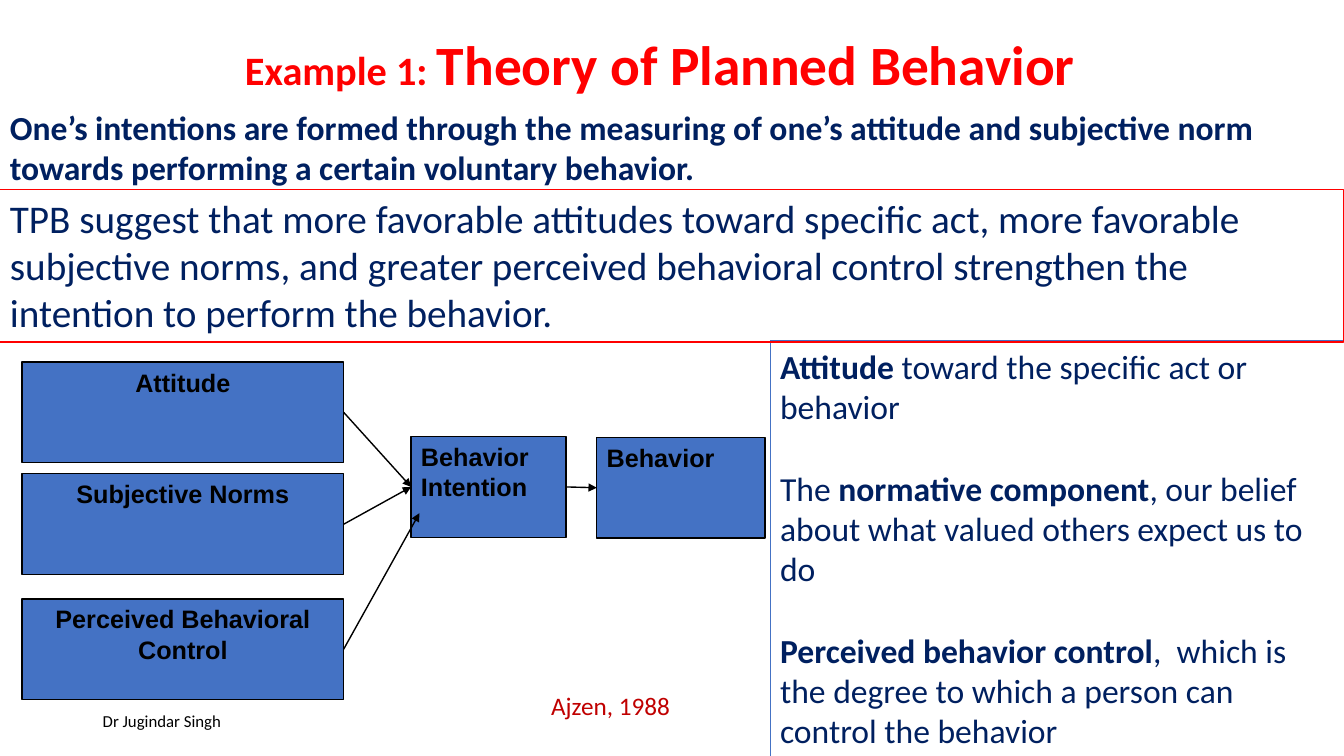
from lxml.etree import SubElement
from pptx import Presentation
from pptx.dml.color import RGBColor
from pptx.enum.shapes import MSO_CONNECTOR, MSO_SHAPE
from pptx.enum.text import MSO_ANCHOR, MSO_AUTO_SIZE, PP_ALIGN
from pptx.oxml.ns import qn
from pptx.util import Cm, Pt

# Content: a paragraph is a list of (text, size, bold) runs
HEAD = [[("Example 1: ", 28.8, True), ("Theory of Planned Behavior", 39.6, True)]]
INTRO = [[("One’s intentions are formed through the measuring of one’s attitude and "
           "subjective norm towards performing a certain voluntary behavior.", 24, True)]]
CLAIM = [[("TPB suggest that more favorable attitudes toward specific act, more "
           "favorable subjective norms, and greater perceived behavioral control "
           "strengthen the intention to perform the behavior.", 28, False)]]
TERMS = [
    [("Attitude", 24, True), (" toward the specific act or behavior", 24, False)],
    [("The ", 24, False), ("normative component", 24, True),
     (", our belief about what valued others expect us to do", 24, False)],
    [("Perceived behavior control", 24, True),
     (",  which is the degree to which a person can control the behavior", 24, False)],
]
AUTHOR = [[("Dr Jugindar Singh", 12, False)]]
SOURCE = [[("Ajzen, 1988", 18, False)]]

# Model boxes: name, left, top, width in cm, alignment
CAUSES = [("Attitude", 9.12), ("Subjective Norms", 11.94),
          ("Perceived Behavioral Control", 15.09)]
BOXES = [(name, 0.56, top, 8.1, PP_ALIGN.CENTER) for name, top in CAUSES] + [
    ("Behavior Intention", 10.36, 11, 3.91, PP_ALIGN.LEFT),
    ("Behavior", 15.04, 11.02, 4.24, PP_ALIGN.LEFT),
]
TALL = 2.54
# Arrows: from box, to box, free end point if the tip is not on a side's middle
ARROWS = [(0, 3, None), (1, 3, None), (2, 3, (10.57, 12.93)), (3, 4, None)]
RIGHT, LEFT = 3, 1  # connection sites of a rectangle

HUES = {"red": "FF0000", "navy": "002060", "blue": "4472C4",
        "black": "000000", "white": "FFFFFF", "wine": "C00000"}


def tint(name):
    return RGBColor.from_string(HUES[name])


def write(frame, paras, hue, font="Calibri", align=PP_ALIGN.LEFT, gap=0):
    for i, runs in enumerate(paras):
        para = frame.paragraphs[0] if i == 0 else frame.add_paragraph()
        para.alignment = align
        para.space_before = Pt(gap if i else 0)
        for text, size, bold in runs:
            run = para.add_run()
            run.text = text
            run.font.name = font
            run.font.size = Pt(size)
            run.font.bold = bold
            run.font.color.rgb = tint(hue)


def panel(place, fill=None, line=None, width=0.75):
    shape = slide.shapes.add_shape(MSO_SHAPE.RECTANGLE, *map(Cm, place))
    shape.shadow.inherit = False
    if fill:
        shape.fill.solid()
        shape.fill.fore_color.rgb = tint(fill)
    else:
        shape.fill.background()
    if line:
        shape.line.color.rgb = tint(line)
        shape.line.width = Pt(width)
    else:
        shape.line.fill.background()
    shape.text_frame.word_wrap = True
    shape.text_frame.vertical_anchor = MSO_ANCHOR.TOP
    return shape


def label(place, paras, hue, wrap, anchor):
    frame = slide.shapes.add_textbox(*map(Cm, place)).text_frame
    frame.word_wrap = wrap
    frame.vertical_anchor = anchor
    write(frame, paras, hue)


def arrow(start, end, tip):
    x, y = map(Cm, tip) if tip else (end.left, end.top + end.height // 2)
    link = slide.shapes.add_connector(
        MSO_CONNECTOR.STRAIGHT, start.left + start.width,
        start.top + start.height // 2, x, y)
    link.begin_connect(start, RIGHT)
    if not tip:
        link.end_connect(end, LEFT)
    link.line.color.rgb = tint("black")
    link.line.width = Pt(1)
    SubElement(link.line._get_or_add_ln(), qn("a:tailEnd"), type="triangle")
    SubElement(link._element.spPr, qn("a:effectLst"))


deck = Presentation()
deck.slide_width, deck.slide_height = Cm(33.87), Cm(19.05)
slide = deck.slides.add_slide(deck.slide_layouts[5])

# Title
title = slide.shapes.title
title.left, title.top, title.width, title.height = map(Cm, (5.92, 0.84, 22.86, 1.7))
title.text_frame.auto_size = MSO_AUTO_SIZE.NONE
title.text_frame.vertical_anchor = MSO_ANCHOR.MIDDLE
write(title.text_frame, HEAD, "red")
title.text_frame.paragraphs[0].line_spacing = 0.9

# Text panels
write(panel((0, 2.57, 33.58, 2.31), fill="white").text_frame, INTRO, "navy")
write(panel((19.41, 8.59, 14.48, 10.52), line="blue").text_frame, TERMS, "navy", gap=29.3)
write(panel((0, 4.78, 33.87, 3.84), line="red").text_frame, CLAIM, "navy")
label((2.34, 17.65, 7.62, 1.02), AUTHOR, "black", True, MSO_ANCHOR.MIDDLE)

# Model boxes and arrows
boxes = []
for name, left, top, wide, align in BOXES:
    box = panel((left, top, wide, TALL), "blue", "black", 1)
    write(box.text_frame, [[(name, 18, True)]], "black", "Arial", align)
    boxes.append(box)
for start, end, tip in ARROWS:
    arrow(boxes[start], boxes[end], tip)

# Source of the model
label((13.64, 17.27, 3.53, 1.02), SOURCE, "wine", False, MSO_ANCHOR.TOP)

deck.save("out.pptx")
